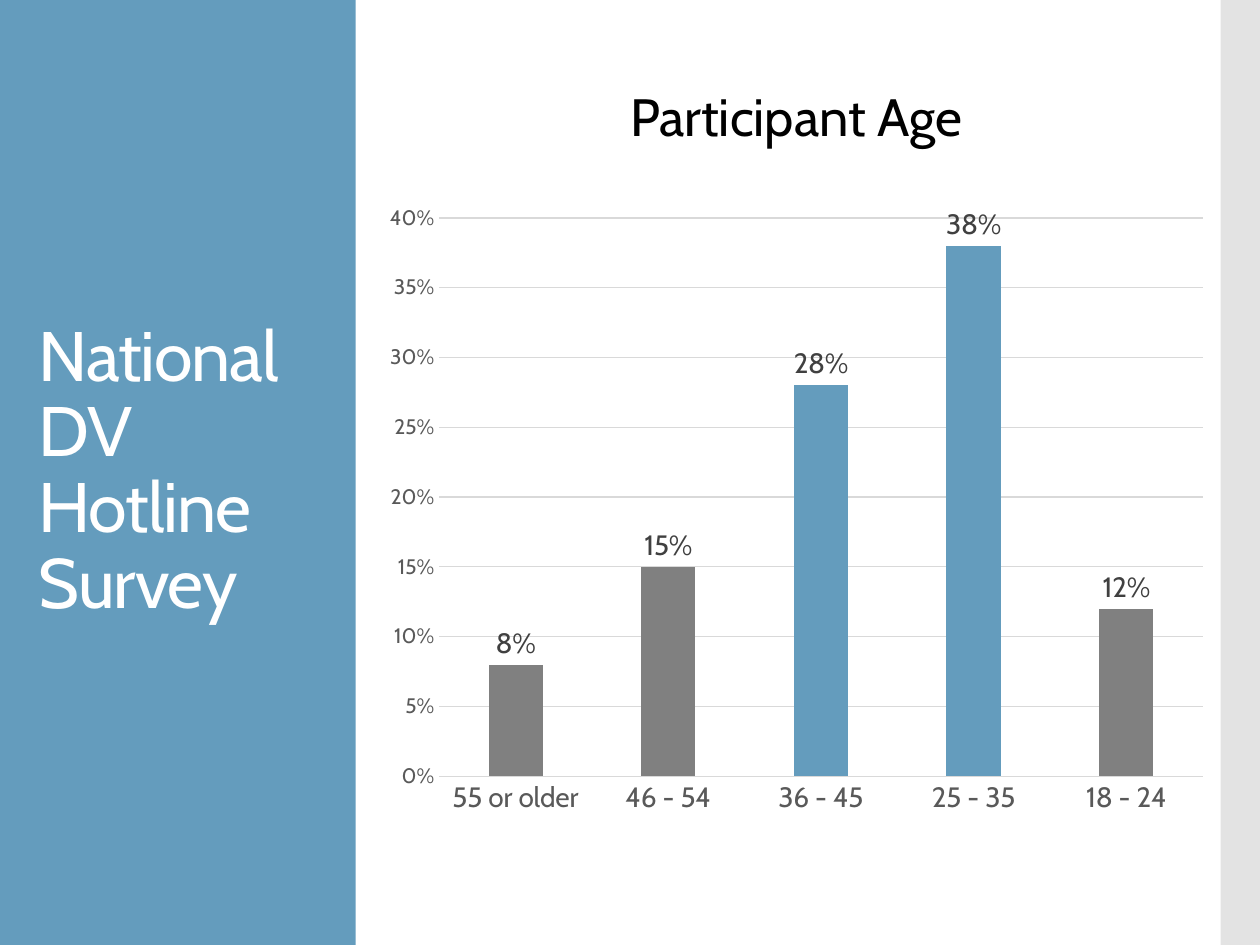
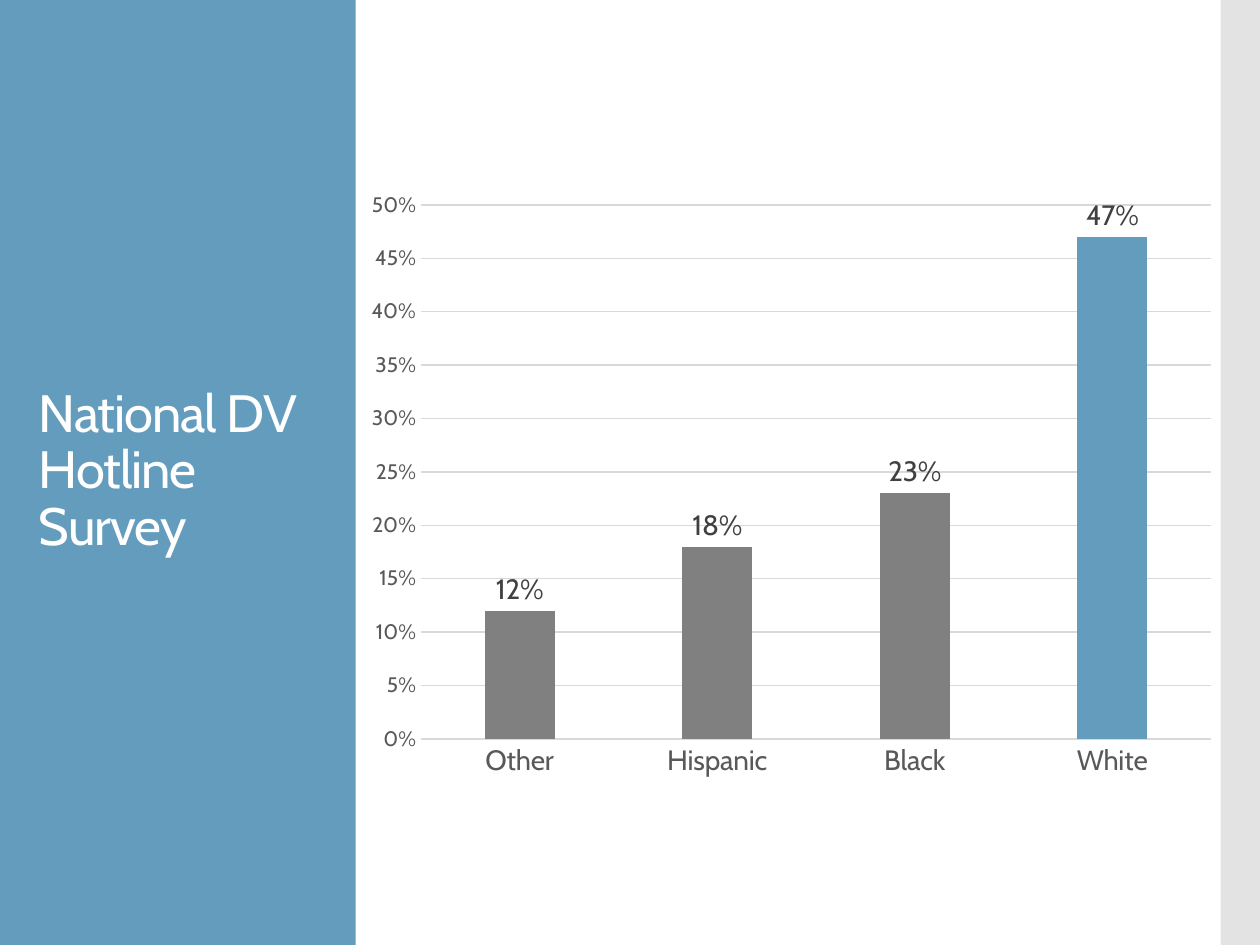
from lxml import etree
from pptx import Presentation
from pptx import util as u
from pptx.chart import data as chart_data
from pptx.dml.color import RGBColor
from pptx.enum import chart as charts, shapes, text
from pptx.oxml import ns

BLUE = RGBColor(0x64, 0x9C, 0xBD)
BAR_GRAY = RGBColor(0x80, 0x80, 0x80)
STRIP_GRAY = RGBColor(0xC8, 0xC8, 0xC8)
GRID_GRAY = RGBColor(0xD9, 0xD9, 0xD9)
AXIS_TEXT = RGBColor(0x59, 0x59, 0x59)
LABEL_TEXT = RGBColor(0x40, 0x40, 0x40)
WHITE = RGBColor(0xFF, 0xFF, 0xFF)
BLACK = RGBColor(0, 0, 0)

PERCENT = {"number_format": "0%", "number_format_is_linked": False}
# left, top, width, height, colour, opacity
BANDS = [
    (0, 0, 203.25, 540, BLUE, 100),
    (697.5, 0, 22.5, 540, STRIP_GRAY, 50),
]
SURVEYS = [
    {
        "title_size": 40,
        "heading": "Participant Age",
        "frame": (213.1, 110.2, 483.8, 362.2),
        "shares": {"55 or older": 0.08, "46 - 54": 0.15, "36 - 45": 0.28,
                   "25 - 35": 0.38, "18 - 24": 0.12},
        "highlights": ["36 - 45", "25 - 35"],
        "axis_maximum": 0.4,
    },
    {
        "title_size": 30,
        "heading": None,
        "frame": (202.3, 103, 499.7, 347.8),
        "shares": {"Other": 0.12, "Hispanic": 0.18, "Black": 0.23, "White": 0.47},
        "highlights": ["White"],
        "axis_maximum": 0.5,
    },
]


def style_font(font, size, color):
    for name, value in {"name": "Cabin", "size": u.Pt(size), "bold": False}.items():
        setattr(font, name, value)
    font.color.rgb = color


def add_text(page, frame, wording, size, color, **paragraph_format):
    """Add a wrapping one-paragraph text box and return it with its run."""
    box = page.shapes.add_textbox(*map(u.Pt, frame))
    box.text_frame.word_wrap = True
    para = box.text_frame.paragraphs[0]
    for name, value in paragraph_format.items():
        setattr(para, name, value)
    span = para.add_run()
    span.text = wording
    style_font(span.font, size, color)
    return box, span


deck = Presentation()
deck.slide_width, deck.slide_height = u.Pt(720), u.Pt(540)

for survey in SURVEYS:
    page = deck.slides.add_slide(deck.slide_layouts[6])

    for *frame, color, opacity in BANDS:
        band = page.shapes.add_shape(shapes.MSO_SHAPE.RECTANGLE, *map(u.Pt, frame))
        band.shadow.inherit = False
        band.fill.solid()
        band.fill.fore_color.rgb = color
        band.line.fill.background()
        if opacity < 100:
            fill_color = band._element.spPr.find(".//" + ns.qn("a:srgbClr"))
            etree.SubElement(fill_color, ns.qn("a:alpha"), val=str(opacity * 1000))

    title, span = add_text(page, (15.1, 88.6, 174.2, 362.2), "National DV Hotline Survey",
                           survey["title_size"], WHITE, line_spacing=0.9)
    title.text_frame.vertical_anchor = text.MSO_ANCHOR.MIDDLE
    span.font._element.set("spc", "-60")

    shares = chart_data.CategoryChartData(number_format="0%")
    shares.categories = list(survey["shares"])
    shares.add_series("Series 1", list(survey["shares"].values()))
    chart = page.shapes.add_chart(charts.XL_CHART_TYPE.COLUMN_CLUSTERED,
                                  *map(u.Pt, survey["frame"]), shares).chart
    chart.has_title = chart.has_legend = False
    style_font(chart.font, 10, BLACK)

    for axis, size in ((chart.category_axis, 16), (chart.value_axis, 12)):
        axis.major_tick_mark = axis.minor_tick_mark = charts.XL_TICK_MARK.NONE
        style_font(axis.tick_labels.font, size, AXIS_TEXT)

    value_axis = chart.value_axis
    value_axis.has_major_gridlines = True
    value_axis.format.line.fill.background()
    scale = {"minimum_scale": 0, "maximum_scale": survey["axis_maximum"], "major_unit": 0.05}
    for name, value in scale.items():
        setattr(value_axis, name, value)
    for line in (chart.category_axis.format.line, value_axis.major_gridlines.format.line):
        line.color.rgb = GRID_GRAY
        line.width = u.Pt(0.75)

    plot = chart.plots[0]
    plot.gap_width = 182
    plot.vary_by_categories = False
    series = plot.series[0]
    series.format.fill.solid()
    series.format.fill.fore_color.rgb = BAR_GRAY
    for index, category in enumerate(survey["shares"]):
        if category in survey["highlights"]:
            bar_fill = series.points[index].format.fill
            bar_fill.solid()
            bar_fill.fore_color.rgb = BLUE

    labels = series.data_labels
    labels.show_value = True
    labels.position = charts.XL_LABEL_POSITION.OUTSIDE_END
    style_font(labels.font, 16, LABEL_TEXT)
    for target in (labels, value_axis.tick_labels):
        for name, value in PERCENT.items():
            setattr(target, name, value)

    if survey["heading"]:
        add_text(page, (329.8, 44.6, 250.6, 43.9), survey["heading"], 30, BLACK,
                 alignment=text.PP_ALIGN.CENTER)

deck.save("out.pptx")
